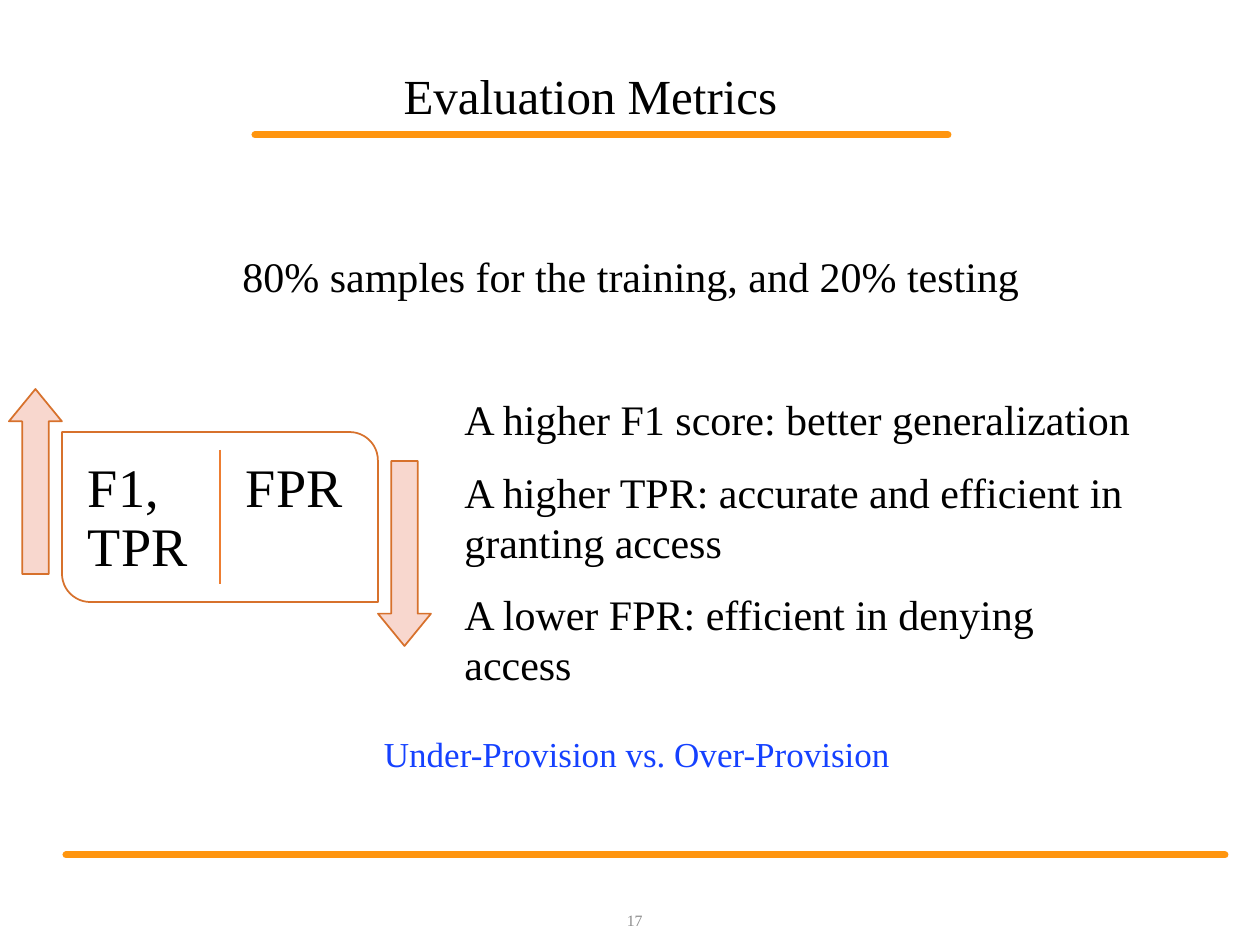
from dataclasses import dataclass

from lxml.etree import SubElement
from pptx import Presentation
from pptx.dml.color import RGBColor as Rgb
from pptx.enum.shapes import MSO_CONNECTOR as Conn, MSO_SHAPE as Geom
from pptx.enum.text import MSO_ANCHOR as Anchor, MSO_AUTO_SIZE as Fit, PP_ALIGN as Align
from pptx.oxml.ns import qn
from pptx.util import Emu, Pt


@dataclass(frozen=True)
class Theme:
    """Colours, font and type sizes."""
    font: str = "Times New Roman"
    ink: str = "000000"
    gray: str = "8C8C8C"
    blue: str = "1541FF"
    white: str = "FFFFFF"
    bar: str = "FF950E"
    edge: str = "D7712C"
    split: str = "ED7D31"
    pale: str = "F8D7CE"
    title: int = 28
    body: int = 24
    note: int = 20
    label: int = 31
    page: int = 9


T = Theme()


def px(n):
    """Turn pixels into EMU."""
    return Emu(round(n * 914400 / 126))


def place(box):
    """Turn a pixel box into EMU lengths."""
    return [px(n) for n in box]


def write(frame, text, size=T.body, color=T.ink, align=Align.LEFT,
          anchor=Anchor.TOP, space=1.0, inset=None, fit=Fit.NONE):
    """Fill a text frame with one formatted paragraph."""
    frame.word_wrap, frame.auto_size, frame.vertical_anchor = True, fit, anchor
    if inset is not None:
        frame.margin_left = frame.margin_right = px(inset)
        frame.margin_top = frame.margin_bottom = px(inset)
    para = frame.paragraphs[0]
    para.alignment, para.line_spacing = align, space
    run = para.add_run()
    run.text = text
    run.font.name, run.font.size = T.font, Pt(size)
    run.font.color.rgb = Rgb.from_string(color)


def head(slide, box, text):
    """Move and fill the title."""
    title = slide.shapes.title
    title.left, title.top, title.width, title.height = place(box)
    write(title.text_frame, text, size=T.title, align=Align.CENTER,
          anchor=Anchor.BOTTOM, space=0.9)


def label(slide, box, text, **style):
    """Add a text box."""
    write(slide.shapes.add_textbox(*place(box)).text_frame, text, **style)


def rule(slide, start, end, color, width, cap="flat"):
    """Add a straight line."""
    line = slide.shapes.add_connector(Conn.STRAIGHT, *place(start + end))
    line.line.color.rgb, line.line.width = Rgb.from_string(color), Pt(width)
    line.line._get_or_add_ln().set("cap", cap)
    SubElement(line._element.spPr, qn("a:effectLst"))


def shape(slide, kind, box, fill, adjust, turn=0):
    """Add an outlined preset shape."""
    item = slide.shapes.add_shape(kind, *place(box))
    item.shadow.inherit = False
    item.fill.solid()
    item.fill.fore_color.rgb = Rgb.from_string(fill)
    item.line.color.rgb, item.line.width = Rgb.from_string(T.edge), Pt(1)
    for i, value in enumerate(adjust):
        item.adjustments[i] = value
    item.rotation = turn


def panel(slide):
    """Draw the metric panel with its two arrows."""
    shape(slide, Geom.ROUND_2_DIAG_RECTANGLE, (62, 432, 316, 170), T.white, (0, 0.167))
    rule(slide, (220, 450), (220, 584), T.split, 1)
    for left, text in ((72, "F1, TPR"), (230, "FPR")):
        label(slide, (left, 445, 137, 144), text, size=T.label, space=0.9, inset=16)
    for left, top, turn in ((-57, 455, 270), (312, 527, 90)):
        shape(slide, Geom.RIGHT_ARROW, (left, top, 185, 53), T.pale, (0.5, 0.61), turn)


def main():
    """Build the slide."""
    deck = Presentation()
    deck.slide_width, deck.slide_height = px(1260), px(945)
    slide = deck.slides.add_slide(deck.slide_layouts[5])
    rule(slide, (255, 135), (948, 135), T.bar, 4, cap="rnd")
    rule(slide, (66, 855), (1225, 855), T.bar, 4, cap="rnd")
    head(slide, (251, 67, 679, 64), "Evaluation Metrics")
    label(slide, (605, 895, 50, 50), "17", size=T.page, color=T.gray,
          align=Align.RIGHT, anchor=Anchor.MIDDLE)
    for top, wide, high, text in (
        (387, 709, 63, "A higher F1 score: better generalization"),
        (460, 808, 115, "A higher TPR: accurate and efficient in granting access"),
        (582, 709, 115, "A lower FPR: efficient in denying access"),
    ):
        label(slide, (452, top, wide, high), text, fit=Fit.SHAPE_TO_FIT_TEXT)
    panel(slide)
    label(slide, (205, 244, 862, 63), "80% samples for the training, and 20% testing ",
          align=Align.CENTER, fit=Fit.SHAPE_TO_FIT_TEXT)
    label(slide, (353, 726, 568, 55), "Under-Provision vs. Over-Provision", size=T.note,
          color=T.blue, align=Align.CENTER, fit=Fit.SHAPE_TO_FIT_TEXT)
    deck.save("out.pptx")


if __name__ == "__main__":
    main()
